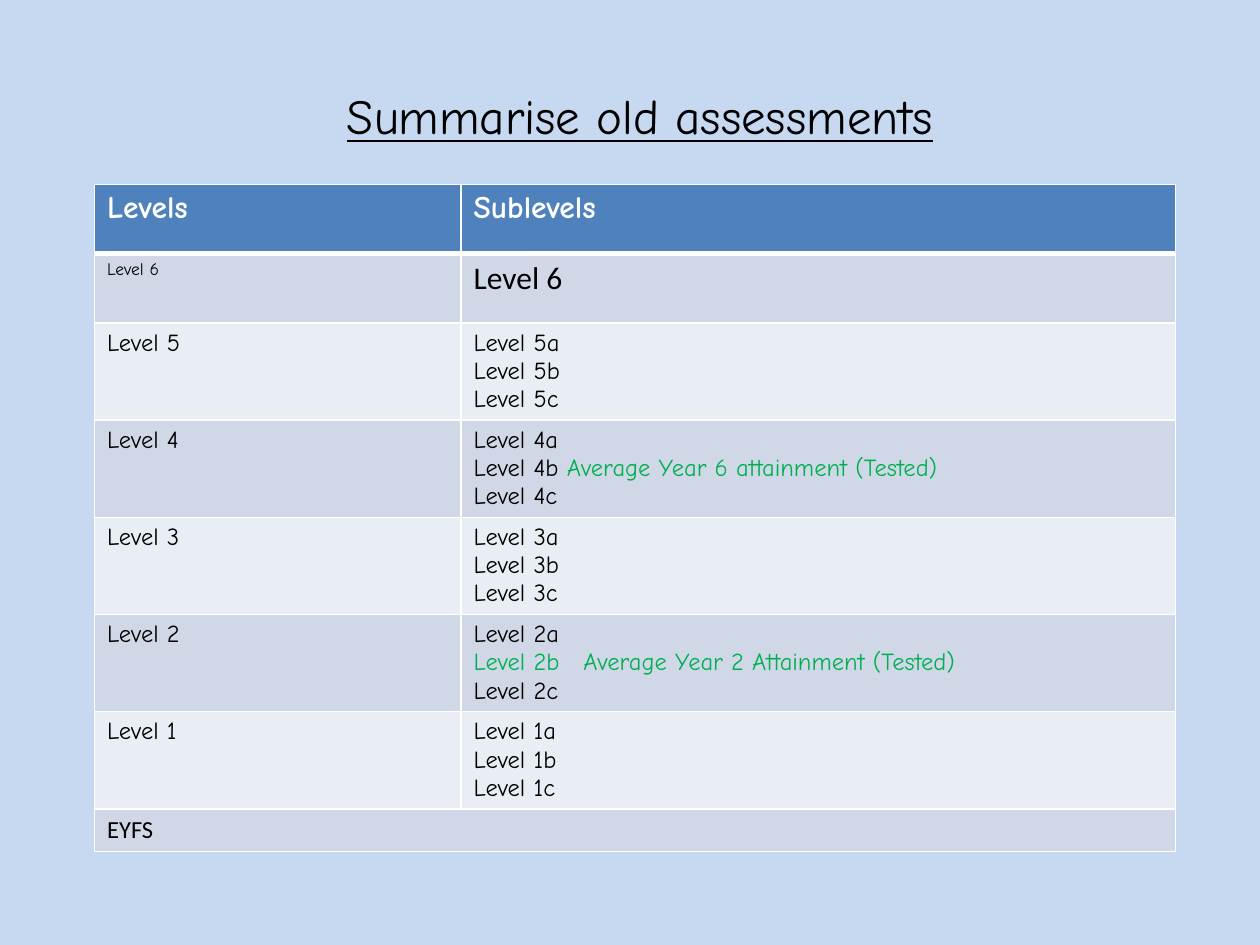
"""Build a slide that summarises the old assessment levels in a table."""
from lxml import etree
from pptx import Presentation, util as u
from pptx.dml.color import RGBColor
from pptx.enum import text
from pptx.oxml.ns import qn

HUES = {"back": "C6D9F1", "head": "4F81BD", "dark": "D0D8E8",
        "light": "E9EDF4", "ink": "000000", "white": "FFFFFF", "note": "00B050"}
WIDE, HIGH = 10, 7.5
COLS = [2.91, 5.67]
ROWS = [0.55] * 2 + [0.77] * 5 + [0.34]
FONT, PLAIN = "Comic Neue", "Calibri"


def hue(name):
    return RGBColor.from_string(HUES[name])


def add_run(para, words, size=14, face=FONT, ink="ink", bold=False):
    run = para.add_run()
    run.text = words
    font = run.font
    font.size, font.name, font.bold = u.Pt(size), face, bold
    font.color.rgb = hue(ink)
    return run


def add_title(slide, words):
    title = slide.shapes.title
    title.left, title.top = u.Inches(0.091 * WIDE), u.Inches(0.08 * HIGH)
    title.width, title.height = u.Inches(0.834 * WIDE), u.Inches(0.084 * HIGH)
    title.text_frame.vertical_anchor = text.MSO_ANCHOR.MIDDLE
    para = title.text_frame.paragraphs[0]
    para.alignment = text.PP_ALIGN.CENTER
    add_run(para, words, 28).font.underline = True


def add_edges(cell, widths):
    props = cell._tc.get_or_add_tcPr()
    for side, width in widths.items():
        line = etree.SubElement(props, qn(f"a:ln{side}"), w=str(u.Pt(width)))
        fill = etree.SubElement(line, qn("a:solidFill"))
        etree.SubElement(fill, qn("a:srgbClr"), val=HUES["white"])


def add_tab(para, place):
    tabs = etree.SubElement(para._p.get_or_add_pPr(), qn("a:tabLst"))
    etree.SubElement(tabs, qn("a:tab"), pos=str(u.Inches(place)), algn="l")


def fill_cell(cell, lines, **style):
    """Write lines, each a list of (words, ink) runs."""
    frame = cell.text_frame
    for i, runs in enumerate(lines):
        para = frame.add_paragraph() if i else frame.paragraphs[0]
        if any("\t" in words for words, _ in runs):
            add_tab(para, 0.87)
        for words, ink in runs:
            add_run(para, words, ink=ink, **style)


def add_grid(slide):
    frame = slide.shapes.add_table(
        len(ROWS), len(COLS), u.Inches(0.075 * WIDE), u.Inches(0.195 * HIGH),
        u.Inches(sum(COLS)), u.Inches(sum(ROWS)))
    table = frame.table
    table.first_row = table.horz_banding = False
    for col, width in zip(table.columns, COLS):
        col.width = u.Inches(width)
    for i, (row, height) in enumerate(zip(table.rows, ROWS)):
        row.height = u.Inches(height)
        shade = "head" if i == 0 else "dark" if i % 2 else "light"
        for cell in row.cells:
            add_edges(cell, {"L": 1, "R": 1, "T": 3 if i == 1 else 1,
                             "B": 1 if i else 3})
            cell.fill.solid()
            cell.fill.fore_color.rgb = hue(shade)
    return table


def fill_grid(table):
    for col, words in enumerate(["Levels", "Sublevels"]):
        fill_cell(table.cell(0, col), [[(words, "white")]], size=18, bold=True)
    for col, (size, face) in enumerate([(10, FONT), (18, PLAIN)]):
        fill_cell(table.cell(1, col), [[("Level 6", "ink")]], size=size, face=face)
    marked = {
        "Level 4b": [("Level 4b", "ink"),
                     (" Average Year 6 attainment (Tested)", "note")],
        "Level 2b": [("Level 2b\tAverage Year 2 Attainment (Tested)", "note")],
    }
    for row, level in enumerate(range(5, 0, -1), 2):
        name = f"Level {level}"
        fill_cell(table.cell(row, 0), [[(name, "ink")]])
        subs = [name + mark for mark in "abc"]
        fill_cell(table.cell(row, 1),
                  [marked.get(sub, [(sub, "ink")]) for sub in subs])
    last = table.cell(len(ROWS) - 1, 0)
    last.merge(table.cell(len(ROWS) - 1, 1))
    fill_cell(last, [[("EYFS", "ink")]], face=PLAIN)


def main():
    deck = Presentation()
    deck.slide_width, deck.slide_height = u.Inches(WIDE), u.Inches(HIGH)
    slide = deck.slides.add_slide(deck.slide_layouts[5])
    slide.background.fill.solid()
    slide.background.fill.fore_color.rgb = hue("back")
    add_title(slide, "Summarise old assessments")
    fill_grid(add_grid(slide))
    deck.save("out.pptx")


if __name__ == "__main__":
    main()
